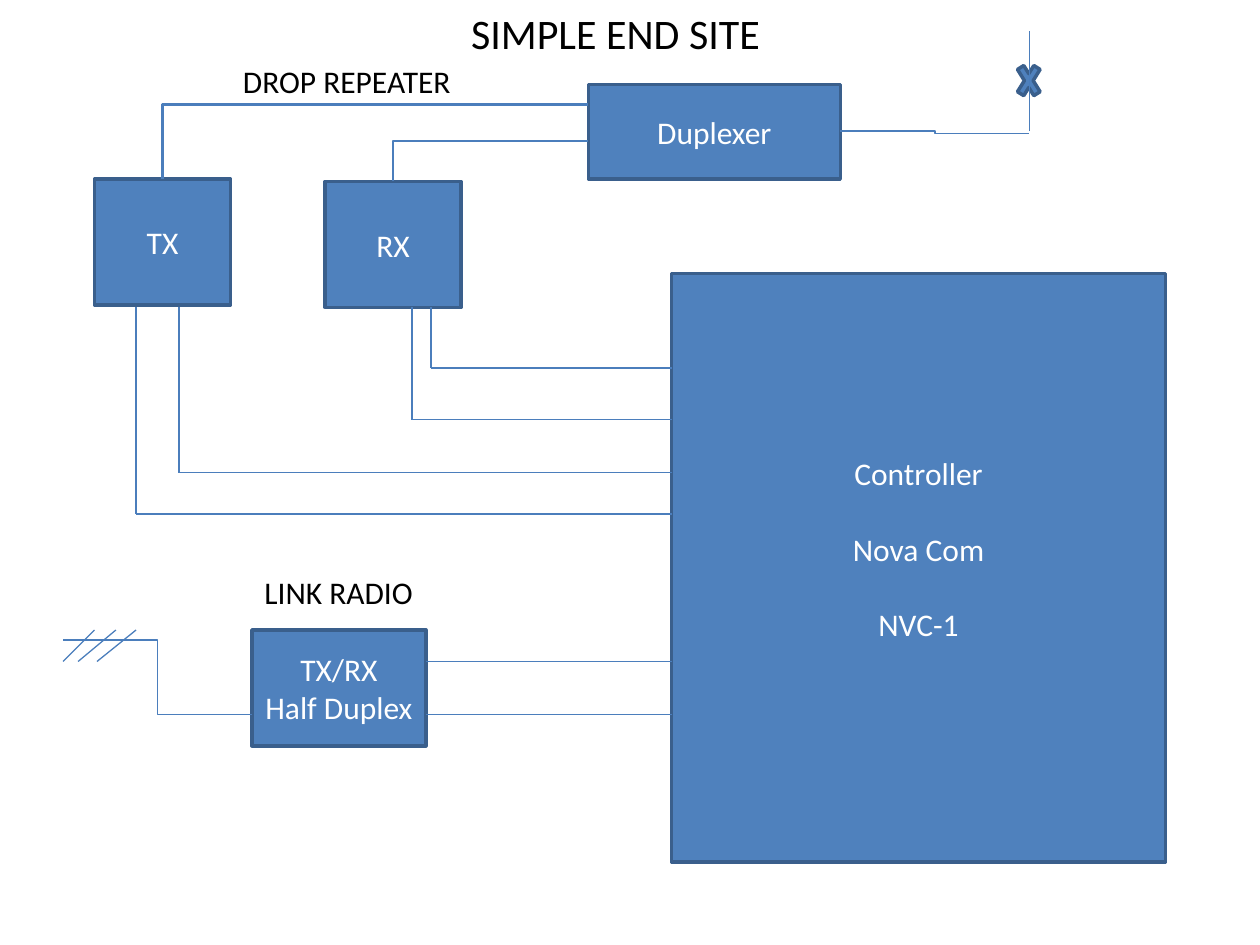
import pptx
import pptx.util
import pptx.dml.color
import pptx.enum.shapes
import pptx.enum.text
import pptx.oxml.ns
import lxml.etree

Inches, Pt = pptx.util.Inches, pptx.util.Pt
SHAPE = pptx.enum.shapes.MSO_SHAPE
LINE = pptx.enum.shapes.MSO_CONNECTOR
ALIGN = pptx.enum.text.PP_ALIGN
qn = pptx.oxml.ns.qn


def rgb(value):
    return pptx.dml.color.RGBColor.from_string(value)


def wire(x1, y1, x2, y2, kind=LINE.STRAIGHT, width=0.75):
    cx = s.shapes.add_connector(kind, Inches(x1), Inches(y1), Inches(x2), Inches(y2))
    cx.line.color.rgb = rgb("4B7EBC")
    cx.line.width = Pt(width)
    lxml.etree.SubElement(cx._element.spPr, qn("a:effectLst"))
    return cx


prs = pptx.Presentation()
prs.slide_width, prs.slide_height = Inches(10), Inches(7.5)
s = prs.slides.add_slide(prs.slide_layouts[6])

# Equipment blocks and the antenna mark
gap = Pt(21.6)
blocks = [
    (SHAPE.RECTANGLE, 0.75, 1.42, 1.08, 1, ["TX"], {}),
    (SHAPE.RECTANGLE, 2.58, 1.44, 1.08, 1, ["RX"], {}),
    (SHAPE.RECTANGLE, 4.67, 0.67, 2, 0.75, ["Duplexer"], {}),
    (SHAPE.MATH_MULTIPLY, 8.04, 0.44, 0.25, 0.4, [], {}),
    (SHAPE.RECTANGLE, 5.33, 2.17, 3.92, 4.67, ["Controller", "Nova Com", "NVC-1"],
     {"space_before": gap}),
    (SHAPE.RECTANGLE, 2, 5, 1.38, 0.92, ["TX/RX", "Half Duplex"], {}),
]
for shape, x, y, w, h, lines, spacing in blocks:
    sp = s.shapes.add_shape(shape, Inches(x), Inches(y), Inches(w), Inches(h))
    sp.shadow.inherit = False
    sp.fill.solid()
    sp.fill.fore_color.rgb = rgb("4F81BD")
    sp.line.color.rgb = rgb("3A5F8C")
    sp.line.width = Pt(2)
    tf = sp.text_frame
    tf.vertical_anchor = pptx.enum.text.MSO_ANCHOR.MIDDLE
    if spacing:
        tf.margin_bottom = Inches(0.05) + gap  # lifts the list above centre
    for i, text in enumerate(lines):
        p = tf.paragraphs[0] if i == 0 else tf.add_paragraph()
        p.alignment = ALIGN.CENTER
        if i:
            for name, value in spacing.items():
                setattr(p, name, value)
        r = p.add_run()
        r.text = text
        for name, value in {"size": Pt(18), "name": "Calibri"}.items():
            setattr(r.font, name, value)
        r.font.color.rgb = rgb("FFFFFF")

# One-bend feeds from TX and RX up to the duplexer
for x, y, bus_y, width in [(1.29, 1.42, 0.83, 1.5), (3.12, 1.44, 1.12, 1)]:
    run, rise = 4.67 - x, y - bus_y
    mid_x, mid_y = x + run / 2, y - rise / 2
    # The frame is turned a quarter, so its width is the rise
    cx = wire(mid_x + rise / 2, mid_y + run / 2, mid_x - rise / 2, mid_y - run / 2,
              LINE.ELBOW, width)
    cx._element.spPr.find(qn("a:xfrm")).set("rot", "5400000")
    cx._element.spPr.find(qn("a:prstGeom")).set("prst", "bentConnector2")

# Antenna feeds
wire(6.67, 1.04, 8.17, 1.06, LINE.ELBOW)
wire(8.17, 1.04, 8.17, 0.25)
wire(2, 5.67, 0.5, 5.08, LINE.ELBOW)

# Control pairs from RX and TX to the controller
for x, y in [(3.42, 2.92), (3.27, 3.33), (1.42, 3.75), (1.08, 4.08)]:
    wire(x, 2.44, x, y)
    wire(x, y, 5.33, y)

# Link radio pair
for y in (5.25, 5.67):
    wire(3.38, y, 5.33, y)

# Link antenna elements
for x1, x2 in [(0.75, 0.5), (0.92, 0.62), (1.08, 0.77)]:
    wire(x1, 5, x2, 5.25)

# Title and captions
for text, x, y, w, h, size in [
    ("DROP REPEATER", 1.83, 0.44, 1.86, 0.4, 18),
    ("LINK RADIO", 2, 4.5, 1.39, 0.4, 18),
    ("SIMPLE END SITE", 3.64, 0.01, 2.52, 0.5, 24),
]:
    sp = s.shapes.add_textbox(Inches(x), Inches(y), Inches(w), Inches(h))
    tf = sp.text_frame
    tf.word_wrap = False
    tf.auto_size = pptx.enum.text.MSO_AUTO_SIZE.SHAPE_TO_FIT_TEXT
    r = tf.paragraphs[0].add_run()
    r.text = text
    for name, value in {"size": Pt(size), "name": "Calibri"}.items():
        setattr(r.font, name, value)
    r.font.color.rgb = rgb("000000")

prs.save("out.pptx")
